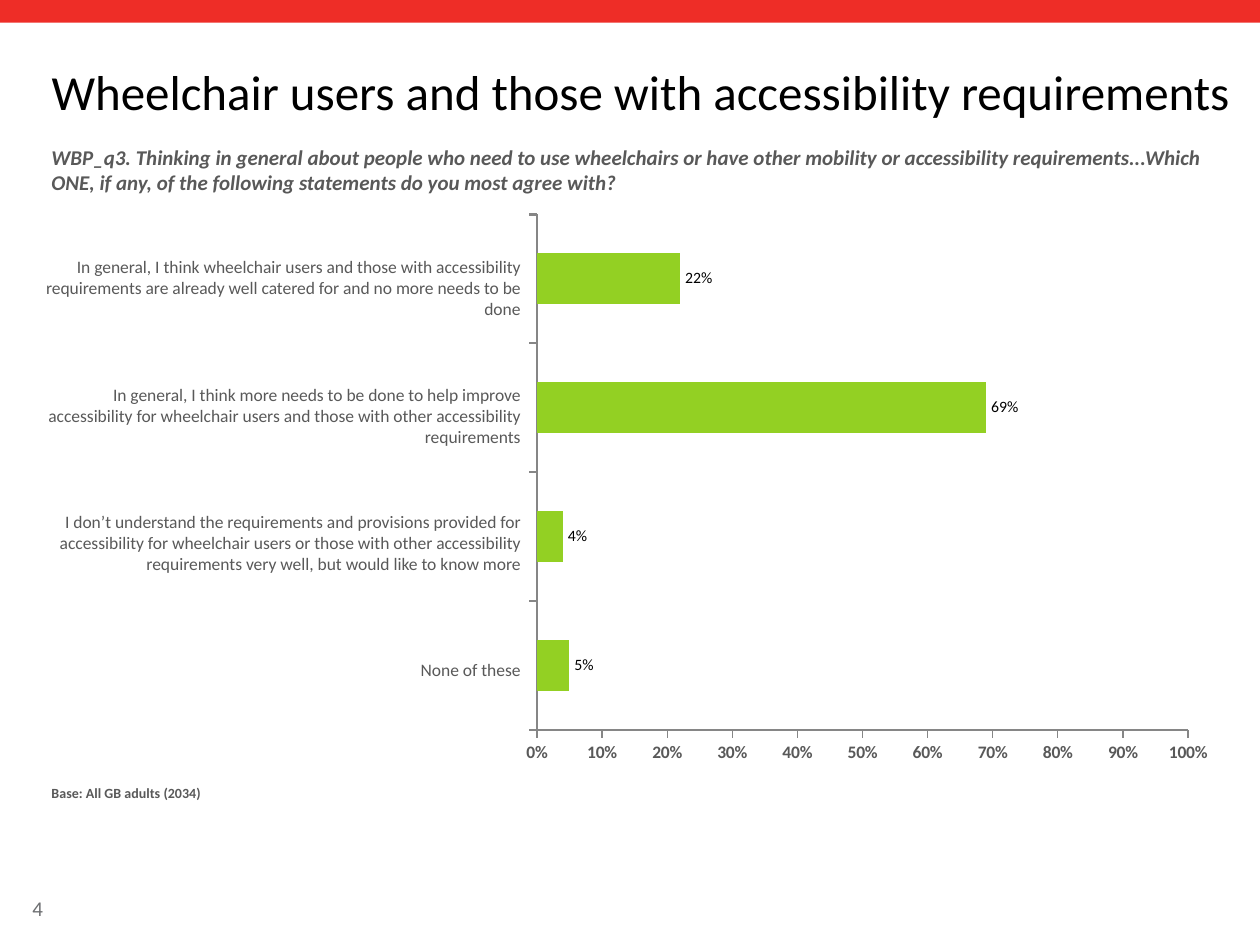
from dataclasses import dataclass

from lxml.etree import SubElement
from pptx import Presentation
from pptx.chart.data import CategoryChartData as ChartData
from pptx.dml.color import RGBColor as Rgb
from pptx.enum.chart import XL_CHART_TYPE as Kind
from pptx.enum.chart import XL_LABEL_POSITION as LabelPos
from pptx.enum.chart import XL_TICK_LABEL_POSITION as TickPos
from pptx.enum.chart import XL_TICK_MARK as Tick
from pptx.enum.shapes import MSO_SHAPE as Shape
from pptx.enum.text import MSO_ANCHOR as Anchor
from pptx.enum.text import MSO_AUTO_SIZE as Fit
from pptx.enum.text import PP_ALIGN as Align
from pptx.oxml.ns import qn
from pptx.util import Inches, Pt


@dataclass(frozen=True)
class Theme:
    face: str = "Calibri"
    chart_face: str = "Manrope"
    red: str = "EE2D27"
    green: str = "93D023"
    black: str = "000000"
    dark: str = "595959"
    grey: str = "6D6F71"
    line: str = "868686"
    title: int = 28
    chart: int = 18
    lead: int = 12
    label: int = 10
    value: int = 9
    note: int = 8


@dataclass(frozen=True)
class Box:
    left: float
    top: float
    width: float
    height: float

    def emu(self) -> tuple:
        return tuple(map(Inches, (self.left, self.top, self.width, self.height)))


@dataclass(frozen=True)
class Answer:
    text: str
    share: float


THEME = Theme()
ANSWERS = [
    Answer("In general, I think wheelchair users and those with accessibility "
           "requirements are already well catered for and no more needs to be done", 0.22),
    Answer("In general, I think more needs to be done to help improve accessibility "
           "for wheelchair users and those with other accessibility requirements", 0.69),
    Answer("I don’t understand the requirements and provisions provided for "
           "accessibility for wheelchair users or those with other accessibility "
           "requirements very well, but would like to know more", 0.04),
    Answer("None of these", 0.05),
]
QUESTION = ("WBP_q3. Thinking in general about people who need to use wheelchairs or "
            "have other mobility or accessibility requirements...Which ONE, if any, "
            "of the following statements do you most agree with?")


def style(font, size: int, color: str, bold: bool = False,
          italic: bool = False, face: str = THEME.face) -> None:
    font.name, font.size = face, Pt(size)
    font.bold, font.italic = bold, italic
    font.color.rgb = Rgb.from_string(color)


def write(shape, text: str, size: int, color: str, bold: bool = False,
          italic: bool = False, align=Align.LEFT, anchor=Anchor.TOP) -> None:
    frame = shape.text_frame
    frame.word_wrap = True
    frame.auto_size = Fit.NONE
    frame.vertical_anchor = anchor
    para = frame.paragraphs[0]
    para.alignment = align
    run = para.add_run()
    run.text = text
    style(run.font, size, color, bold, italic)


def add_text(slide, box: Box, text: str, size: int, color: str, **look) -> None:
    write(slide.shapes.add_textbox(*box.emu()), text, size, color, **look)


def draw_axis(axis, width: float) -> None:
    axis.has_major_gridlines = False
    axis.major_tick_mark, axis.minor_tick_mark = Tick.OUTSIDE, Tick.NONE
    axis.format.line.color.rgb = Rgb.from_string(THEME.line)
    axis.format.line.width = Pt(width)


def set_plot(chart, box: Box) -> None:
    """Fix the inner plot area, in fractions of the chart."""
    area = chart._chartSpace.chart.plotArea
    for old in area.findall(qn("c:layout")):
        area.remove(old)
    layout = SubElement(area, qn("c:layout"))
    area.insert(0, layout)
    manual = SubElement(layout, qn("c:manualLayout"))
    parts = [("layoutTarget", "inner"), ("xMode", "edge"), ("yMode", "edge"),
             ("x", box.left), ("y", box.top), ("w", box.width), ("h", box.height)]
    for tag, val in parts:
        SubElement(manual, qn(f"c:{tag}")).set("val", str(val))


def add_bars(slide, box: Box, answers: list[Answer]) -> None:
    # Bars run from the bottom up, so the answers go in reverse
    data = ChartData(number_format="0%")
    data.categories = [str(n + 1) for n in range(len(answers))]
    data.add_series("Series 1", [a.share for a in reversed(answers)])
    chart = slide.shapes.add_chart(Kind.BAR_CLUSTERED, *box.emu(), data).chart
    chart.has_legend = chart.has_title = False
    style(chart.font, THEME.chart, THEME.grey, face=THEME.chart_face)
    set_plot(chart, Box(0.034, 0.02, 0.918, 0.904))

    # Axes
    cats, vals = chart.category_axis, chart.value_axis
    draw_axis(cats, 1.5)
    cats.tick_label_position = TickPos.NONE
    style(cats.tick_labels.font, THEME.label, THEME.dark)
    draw_axis(vals, 0.75)
    vals.minimum_scale, vals.maximum_scale, vals.major_unit = 0, 1, 0.1
    vals.tick_label_position = TickPos.LOW
    ticks = vals.tick_labels
    ticks.number_format, ticks.number_format_is_linked = "0%", False
    style(ticks.font, THEME.label, THEME.dark, bold=True)

    # Bars and their values
    plot = chart.plots[0]
    plot.gap_width, plot.overlap, plot.vary_by_categories = 150, -10, False
    bars = plot.series[0]
    bars.format.fill.solid()
    bars.format.fill.fore_color.rgb = Rgb.from_string(THEME.green)
    labels = bars.data_labels
    labels.show_value = True
    labels.position = LabelPos.OUTSIDE_END
    labels.number_format, labels.number_format_is_linked = "0%", False
    style(labels.font, THEME.value, THEME.black)


def main() -> None:
    deck = Presentation()
    deck.slide_width, deck.slide_height = Inches(10), Inches(7.5)
    slide = deck.slides.add_slide(deck.slide_layouts[5])

    # Top band and page number
    band = slide.shapes.add_shape(Shape.RECTANGLE, *Box(0, 0, 10, 0.18).emu())
    band.shadow.inherit = False
    band.fill.solid()
    band.fill.fore_color.rgb = Rgb.from_string(THEME.red)
    band.line.fill.background()
    add_text(slide, Box(0.16, 7.06, 0.77, 0.3), "4", THEME.lead, THEME.grey,
             anchor=Anchor.MIDDLE)

    # Title and question
    title = slide.shapes.title
    title.left, title.top, title.width, title.height = Box(0.31, 0.34, 9.59, 0.76).emu()
    write(title, "Wheelchair users and those with accessibility requirements",
          THEME.title, THEME.black, anchor=Anchor.MIDDLE)
    add_text(slide, Box(0.31, 1.1, 9.39, 0.51), QUESTION, THEME.lead, THEME.dark,
             bold=True, italic=True)

    # Chart with one statement beside each bar
    add_bars(slide, Box(4.07, 1.61, 5.63, 4.53), ANSWERS)
    step = 1.01
    for row, answer in enumerate(ANSWERS):
        add_text(slide, Box(0.16, 1.78 + row * step, 4.07, step), answer.text,
                 THEME.label, THEME.dark, align=Align.RIGHT, anchor=Anchor.MIDDLE)

    # Base note
    add_text(slide, Box(0.31, 6.18, 9.39, 0.43), "Base: All GB adults (2034)",
             THEME.note, THEME.dark, bold=True)
    deck.save("out.pptx")


if __name__ == "__main__":
    main()
